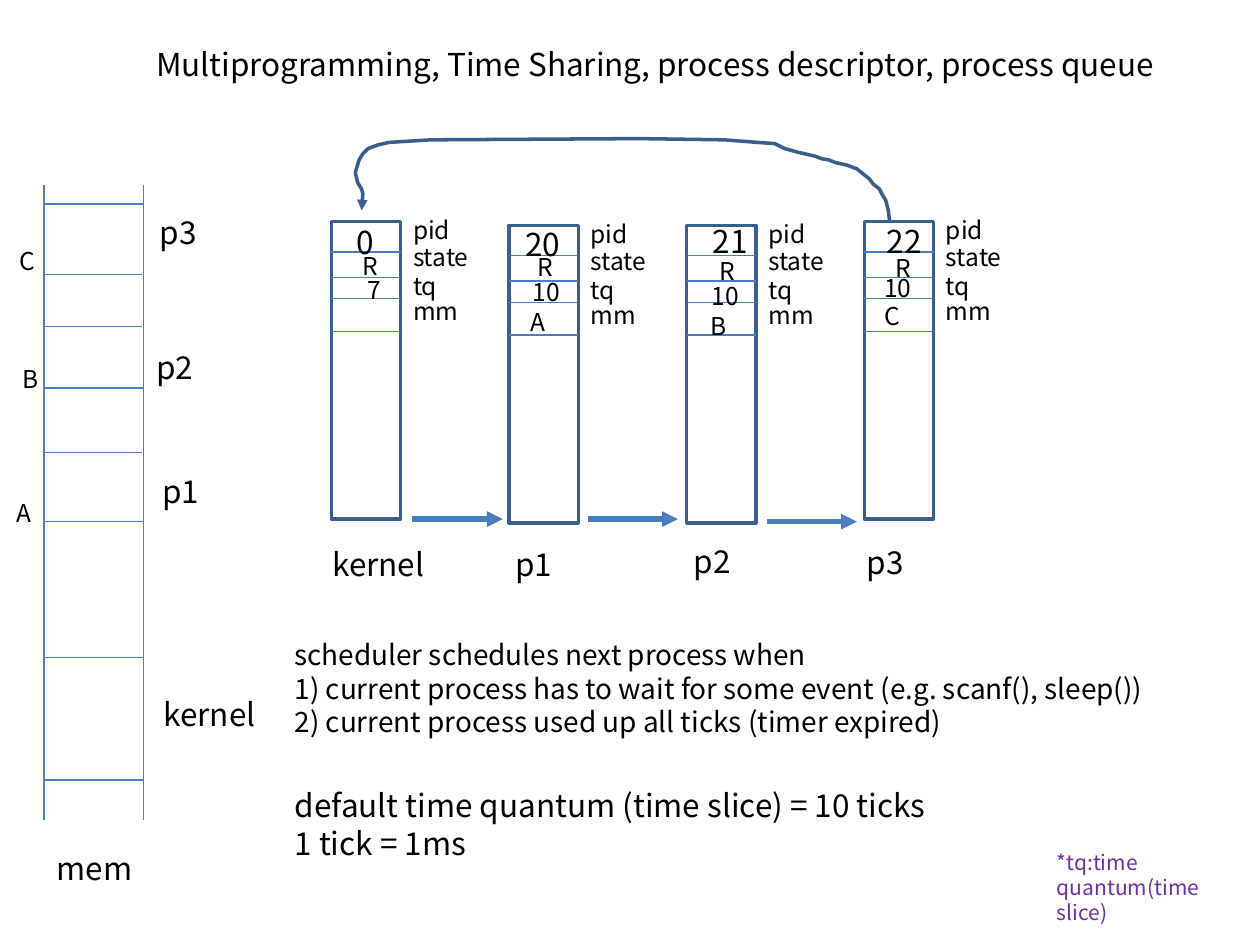
"""Build a slide on multiprogramming, process descriptors and the process queue."""
from lxml import etree
from pptx import Presentation, util as u
from pptx.dml.color import RGBColor
from pptx.enum import shapes, text
from pptx.oxml.ns import qn

FONT = "Noto Sans CJK KR"
COLORS = {"text": "000000", "note": "7030A0", "line": "4B7EBC", "outline": "3A5F8C"}
LABELS = {"name": (1, 0.4, 18), "pid": (0.63, 0.4, 18), "field": (0.87, 0.34, 14),
          "value": (0.56, 0.34, 14), "address": (0.47, 0.34, 14)}

TITLE = "Multiprogramming, Time Sharing, process descriptor, process queue"
FIELDS = [("pid", -0.1), ("state", 0.11), ("tq", 0.34), ("mm", 0.54)]
ROWS = [0.24, 0.44, 0.61, 0.87]
BOX_LEFT, BOX_STEP, BOX_W, BOX_H = 2.63, 1.41, 0.55, 2.36
PROCESSES = [
    {"top": 1.76, "name": ("kernel", 2.54, 4.28), "pid": ("0", 2.73, 1.72),
     "values": [("R", 2.78, 1.94), ("7", 2.82, 2.13)]},
    {"top": 1.79, "name": ("p1", 3.99, 4.28), "pid": ("20", 4.07, 1.74),
     "values": [("R", 4.17, 1.95), ("10", 4.13, 2.15), ("A", 4.11, 2.39)]},
    {"top": 1.79, "name": ("p2", 5.41, 4.25), "pid": ("21", 5.56, 1.71),
     "values": [("R", 5.61, 1.98), ("10", 5.55, 2.18), ("B", 5.54, 2.42)]},
    {"top": 1.76, "name": ("p3", 6.78, 4.26), "pid": ("22", 6.94, 1.71),
     "values": [("R", 7.01, 1.96), ("10", 6.92, 2.12), ("C", 6.92, 2.34)]},
]
NEXT_ARROWS = [(3.27, 3.99, 4.12), (4.67, 5.38, 4.12), (6.09, 6.8, 4.14)]
LOOP = [
    (7.06, 1.75), (7.05, 1.67), (7.03, 1.59), (7, 1.54), (6.98, 1.5), (6.93, 1.46),
    (6.9, 1.42), (6.85, 1.38), (6.8, 1.34), (6.72, 1.31), (6.63, 1.29), (6.58, 1.27),
    (6.52, 1.26), (6.47, 1.24), (6.34, 1.21), (6.23, 1.18), (6.15, 1.14), (6.01, 1.13),
    (5.75, 1.11), (5.07, 1.1), (3.42, 1.11), (3.09, 1.13), (3, 1.15), (2.92, 1.18),
    (2.88, 1.22), (2.85, 1.27), (2.82, 1.37), (2.84, 1.45), (2.87, 1.5), (2.88, 1.54),
    (2.87, 1.67),
]

MEM_LEFT, MEM_W, MEM_TOP, MEM_BOTTOM = 0.35, 0.79, 1.47, 6.51
MEM_LINES = [(0.35, 1.62), (0.34, 2.18), (0.34, 2.59), (0.35, 3.08),
             (0.34, 3.59), (0.35, 4.14), (0.35, 5.22), (0.35, 6.19)]
MEM_NAMES = [("p3", 1.17, 1.64), ("p2", 1.14, 2.71), ("p1", 1.19, 3.7),
             ("kernel", 1.2, 5.47), ("mem", 0.35, 6.69)]
MEM_ADDRESSES = [("C", 0.06, 1.9), ("B", 0.08, 2.84), ("A", 0.03, 3.9)]

RULES = ["scheduler schedules next process when",
         "1) current process has to wait for some event (e.g. scanf(), sleep())",
         "2) current process used up all ticks (timer expired)"]
QUANTUM = ["default time quantum (time slice) = 10 ticks", "1 tick = 1ms"]
NOTE = "*tq:time quantum(time slice)"


def color(name):
    return RGBColor.from_string(COLORS[name])


def add_text(s, lines, x, y, w, h, size, ink="text"):
    sp = s.shapes.add_textbox(*map(u.Inches, (x, y, w, h)))
    tf = sp.text_frame
    tf.word_wrap = True
    for i, line in enumerate(lines):
        p = tf.paragraphs[0] if i == 0 else tf.add_paragraph()
        r = p.add_run()
        r.text = line
        r.font.size, r.font.name = u.Pt(size), FONT
        r.font.color.rgb = color(ink)
    return tf


def add_label(s, kind, label, x, y):
    add_text(s, [label], x, y, *LABELS[kind])


def add_arrowhead(sp):
    etree.SubElement(sp.line._get_or_add_ln(), qn("a:tailEnd"), type="triangle")


def add_line(s, x1, y1, x2, y2, width=0.75):
    cn = s.shapes.add_connector(shapes.MSO_CONNECTOR.STRAIGHT, *map(u.Inches, (x1, y1, x2, y2)))
    cn.line.color.rgb, cn.line.width = color("line"), u.Pt(width)
    etree.SubElement(cn._element.spPr, qn("a:effectLst"))
    return cn


def style_outline(sp):
    sp.shadow.inherit = False
    sp.fill.background()
    sp.line.color.rgb, sp.line.width = color("outline"), u.Pt(2)


def add_memory(s):
    for x in (MEM_LEFT, MEM_LEFT + MEM_W):
        add_line(s, x, MEM_TOP, x, MEM_BOTTOM)
    for x, y in MEM_LINES:
        add_line(s, x, y, x + MEM_W, y)
    for name in MEM_NAMES:
        add_label(s, "name", *name)
    for address in MEM_ADDRESSES:
        add_label(s, "address", *address)


def add_process(s, process, left):
    top, right = process["top"], left + BOX_W
    box = s.shapes.add_shape(shapes.MSO_SHAPE.RECTANGLE,
                             *map(u.Inches, (left, top, BOX_W, BOX_H)))
    style_outline(box)
    for row in ROWS:
        add_line(s, left, top + row, right, top + row)
    for field, offset in FIELDS:
        add_label(s, "field", field, right, top + offset)
    for value in process["values"]:
        add_label(s, "value", *value)
    for kind in ("pid", "name"):
        add_label(s, kind, *process[kind])


def add_loop(s):
    start, *rest = [(u.Inches(x), u.Inches(y)) for x, y in LOOP]
    builder = s.shapes.build_freeform(*start)
    builder.add_line_segments(rest, close=False)
    loop = builder.convert_to_shape()
    style_outline(loop)
    add_arrowhead(loop)


def add_queue(s):
    for i, process in enumerate(PROCESSES):
        add_process(s, process, BOX_LEFT + i * BOX_STEP)
    for x1, x2, y in NEXT_ARROWS:
        add_arrowhead(add_line(s, x1, y, x2, y, 3))
    add_loop(s)


def main():
    prs = Presentation()
    prs.slide_width, prs.slide_height = u.Inches(10), u.Inches(7.5)
    s = prs.slides.add_slide(prs.slide_layouts[6])
    title = add_text(s, [TITLE], 0.7, 0.16, 9, 0.7, 18)
    title.vertical_anchor = text.MSO_ANCHOR.MIDDLE
    title.paragraphs[0].alignment = text.PP_ALIGN.CENTER
    add_memory(s)
    add_queue(s)
    add_text(s, RULES, 2.24, 5.01, 7.4, 0.91, 16)
    add_text(s, QUANTUM, 2.24, 6.19, 5.23, 0.71, 18)
    add_text(s, [NOTE], 8.29, 6.69, 1.57, 0.5, 12, "note")
    prs.save("out.pptx")


if __name__ == "__main__":
    main()
